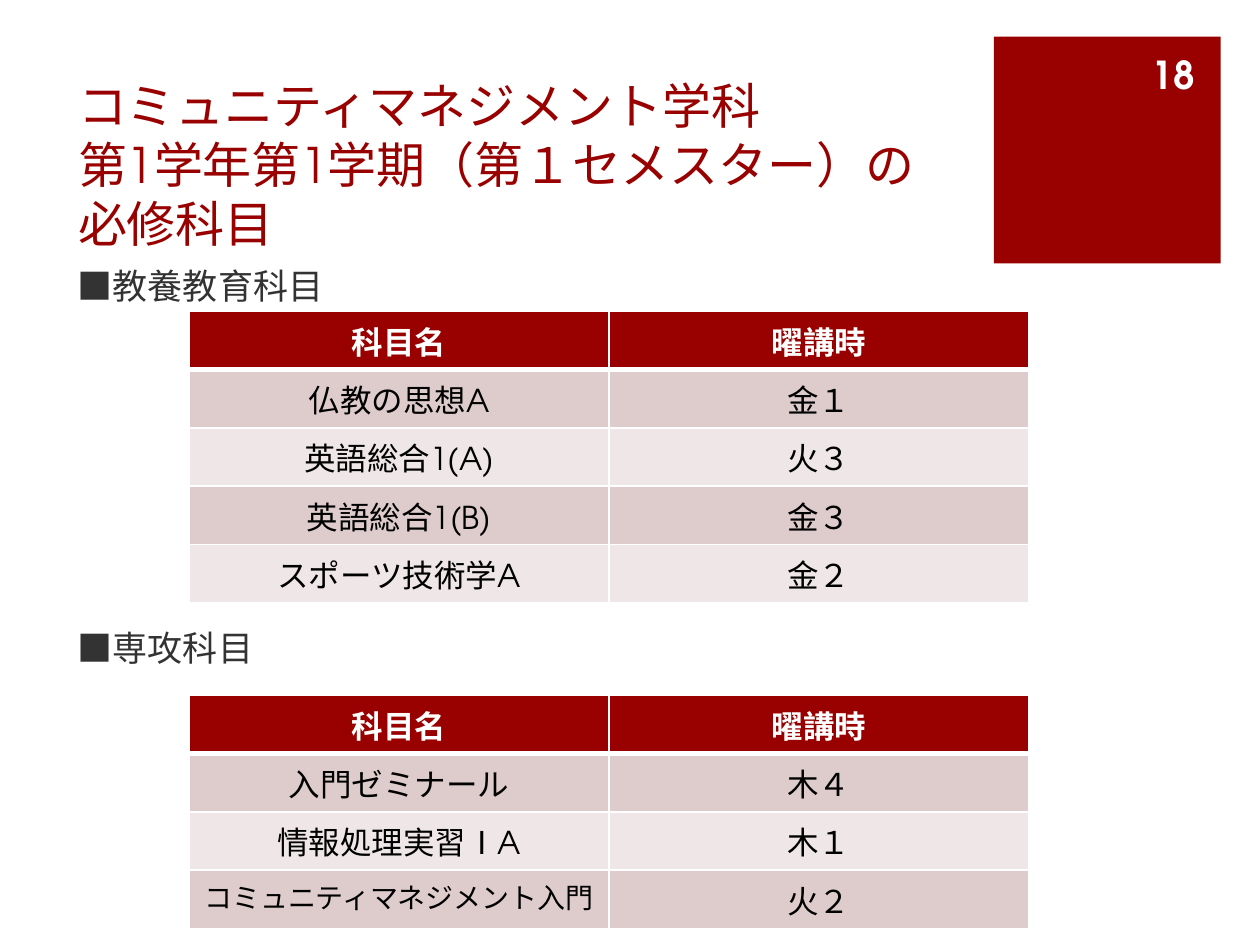
from dataclasses import dataclass

import pptx
import pptx.dml.color
import pptx.enum.shapes
import pptx.enum.text
import pptx.oxml
import pptx.oxml.ns
import pptx.util

Pt = pptx.util.Pt
Align = pptx.enum.text.PP_ALIGN
Anchor = pptx.enum.text.MSO_ANCHOR

FONT = "TeX Gyre Adventor"
COLOURS = {"accent": "990000", "body": "333333", "cell": "000000",
           "white": "FFFFFF", "odd": "DECCCC", "even": "EFE7E7"}
HEADER = ("科目名", "曜講時")
TABLE_LEFT, COLUMN_WIDTH, ROW_HEIGHT = 108, 240, 29.2


@dataclass
class CourseTable:
    top: float
    courses: list[tuple[str, str]]
    small: str = ""  # long course name set in a smaller size


COURSE_TABLES = [
    CourseTable(397.4, [("入門ゼミナール", "木４"), ("情報処理実習ⅠA", "木１"),
                        ("コミュニティマネジメント入門", "火２")],
                small="コミュニティマネジメント入門"),
    CourseTable(178, [("仏教の思想A", "金１"), ("英語総合1(A)", "火３"),
                      ("英語総合1(B)", "金３"), ("スポーツ技術学A", "金２")]),
]


def colour(name: str) -> pptx.dml.color.RGBColor:
    return pptx.dml.color.RGBColor.from_string(COLOURS[name])


def write(para, text: str, *, size: float, ink: str, bold: bool = False,
          align=Align.LEFT, before: float = 0) -> None:
    """Put formatted text in a paragraph; a newline becomes a line break."""
    para.text = text.replace("\n", "\v")
    para.alignment = align
    para.space_before = Pt(before)
    for span in para.runs:
        span.font.name = FONT
        span.font.size = Pt(size)
        span.font.bold = bold
        span.font.color.rgb = colour(ink)


def place(box, left: float, top: float, width: float, height: float, anchor):
    """Position a text shape and return its text frame."""
    box.left, box.top, box.width, box.height = map(Pt, (left, top, width, height))
    frame = box.text_frame
    frame.word_wrap = True
    frame.auto_size = pptx.enum.text.MSO_AUTO_SIZE.NONE
    frame.vertical_anchor = anchor
    return frame


def add_borders(cell, header: bool) -> None:
    """Draw white cell borders, with a thick rule under the header."""
    properties = cell._tc.get_or_add_tcPr()
    for index, side in enumerate(("lnL", "lnR", "lnT", "lnB")):
        width = 3 if header and side == "lnB" else 1
        line = pptx.oxml.parse_xml(
            f'<a:{side} {pptx.oxml.ns.nsdecls("a")} w="{Pt(width)}"><a:solidFill>'
            f'<a:srgbClr val="{COLOURS["white"]}"/></a:solidFill></a:{side}>')
        properties.insert(index, line)


def add_courses(page, spec: CourseTable) -> None:
    rows = [HEADER, *spec.courses]
    table = page.shapes.add_table(
        len(rows), len(HEADER), Pt(TABLE_LEFT), Pt(spec.top),
        Pt(COLUMN_WIDTH * len(HEADER)), Pt(ROW_HEIGHT * len(rows))).table
    for row_index, row in enumerate(rows):
        header = row_index == 0
        fill = "accent" if header else "odd" if row_index % 2 else "even"
        for column_index, text in enumerate(row):
            cell = table.cell(row_index, column_index)
            cell.fill.solid()
            cell.fill.fore_color.rgb = colour(fill)
            add_borders(cell, header)
            write(cell.text_frame.paragraphs[0], text, align=Align.CENTER,
                  size=16 if text == spec.small else 18, bold=header,
                  ink="white" if header else "cell")


def main() -> None:
    deck = pptx.Presentation()
    deck.slide_width, deck.slide_height = Pt(720), Pt(540)
    page = deck.slides.add_slide(deck.slide_layouts[5])

    # Corner square
    square = page.shapes.add_shape(pptx.enum.shapes.MSO_SHAPE.RECTANGLE,
                                   Pt(568), Pt(21), Pt(129.6), Pt(129.6))
    square.shadow.inherit = False
    square.fill.solid()
    square.fill.fore_color.rgb = colour("accent")
    square.line.fill.background()

    # Title
    frame = place(page.shapes.title, 37.4, 42.5, 512.6, 105.1, Anchor.BOTTOM)
    write(frame.paragraphs[0],
          "コミュニティマネジメント学科\n第1学年第1学期（第１セメスター）の必修科目",
          size=28, ink="accent")

    # Section headings, spaced to leave room for the first table
    box = page.shapes.add_textbox(0, 0, 0, 0)
    frame = place(box, 37.4, 147.6, 512.6, 357.1, Anchor.TOP)
    write(frame.paragraphs[0], "■教養教育科目", size=20, ink="body")
    write(frame.add_paragraph(), "■専攻科目", size=20, ink="body", before=183)

    # Page number
    box = page.shapes.add_textbox(0, 0, 0, 0)
    frame = place(box, 650.2, 28.1, 39.6, 28.8, Anchor.MIDDLE)
    write(frame.paragraphs[0], "18", size=22, ink="white", bold=True,
          align=Align.RIGHT)

    # Course tables
    for spec in COURSE_TABLES:
        add_courses(page, spec)

    deck.save("out.pptx")


if __name__ == "__main__":
    main()
